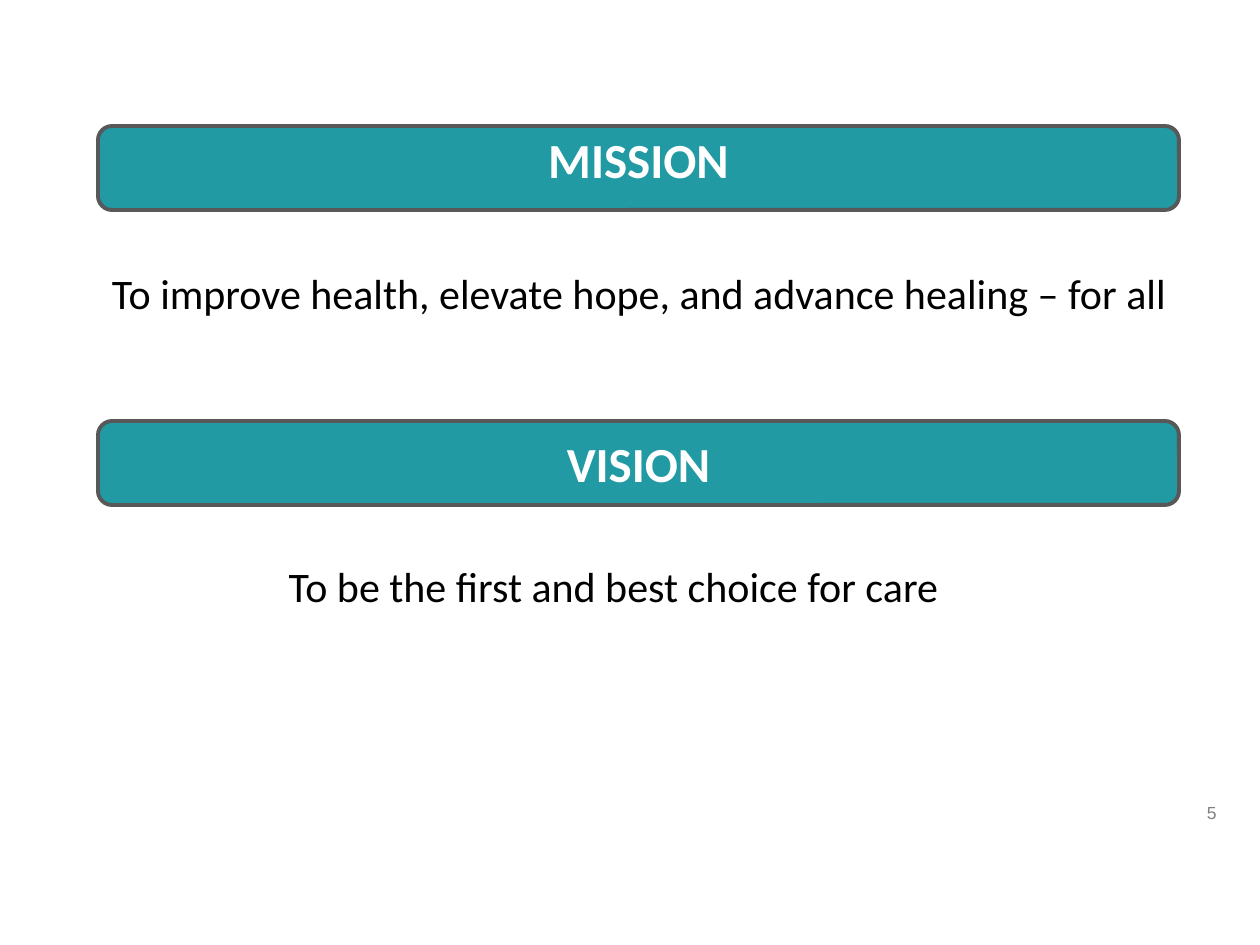
from pptx import Presentation
from pptx.dml.color import RGBColor
from pptx.enum.shapes import MSO_SHAPE as Shape
from pptx.enum.text import MSO_ANCHOR as Anchor, PP_ALIGN as Align
from pptx.util import Emu, Pt

PX = 914400 / 126
TEAL = RGBColor(0x21, 0x9A, 0xA3)
SLATE = RGBColor(0x58, 0x58, 0x58)
WHITE = RGBColor(0xFF, 0xFF, 0xFF)
BLACK = RGBColor(0x00, 0x00, 0x00)
GRAY = RGBColor(0x80, 0x80, 0x80)

HEADING = {"name": "Calibri", "size": Pt(28), "bold": True}
STATEMENT = {"name": "Calibri", "size": Pt(24)}
NUMBER = {"name": "Arial", "size": Pt(10)}


def px(*lengths):
    return [Emu(round(length * PX)) for length in lengths]


def write(shape, text, style, color, align=Align.CENTER):
    shape.text_frame.word_wrap = True
    para = shape.text_frame.paragraphs[0]
    para.alignment = align
    span = para.add_run()
    span.text = text
    for name, value in style.items():
        setattr(span.font, name, value)
    span.font.color.rgb = color


def add_banner(page, box, title, lift):
    """Add a rounded bar whose title sits above the middle by half of lift."""
    banner = page.shapes.add_shape(Shape.ROUNDED_RECTANGLE, *px(*box))
    banner.shadow.inherit = False
    banner.fill.solid()
    banner.fill.fore_color.rgb = TEAL
    banner.line.color.rgb = SLATE
    banner.line.width = Pt(2.25)
    frame = banner.text_frame
    frame.vertical_anchor = Anchor.MIDDLE
    frame.margin_top, frame.margin_bottom = px(0, lift)
    write(banner, title, HEADING, WHITE)


def add_statement(page, box, text):
    write(page.shapes.add_textbox(*px(*box)), text, STATEMENT, BLACK)


def add_section(page, box, title, lift, text, text_left, text_width):
    left, top, width, height = box
    add_banner(page, (left, top, width, 84), title, lift)
    add_statement(page, (left + text_left, top + height - 63, text_width, 63), text)


def add_page_number(page, box, number):
    write(page.shapes.add_textbox(*px(*box)), number, NUMBER, GRAY, Align.RIGHT)


def main():
    deck = Presentation()
    deck.slide_width, deck.slide_height = px(1260, 945)
    page = deck.slides.add_slide(deck.slide_layouts[6])
    add_section(page, (98, 126, 1081, 198), "MISSION", 19,
                "To improve health, elevate hope, and advance healing – for all", -5, 1092)
    add_section(page, (98, 421, 1081, 196), "VISION", 0,
                "To be the first and best choice for care", -25, 1081)
    add_page_number(page, (1081, 796, 148, 29), "5")
    deck.save("out.pptx")


if __name__ == "__main__":
    main()
